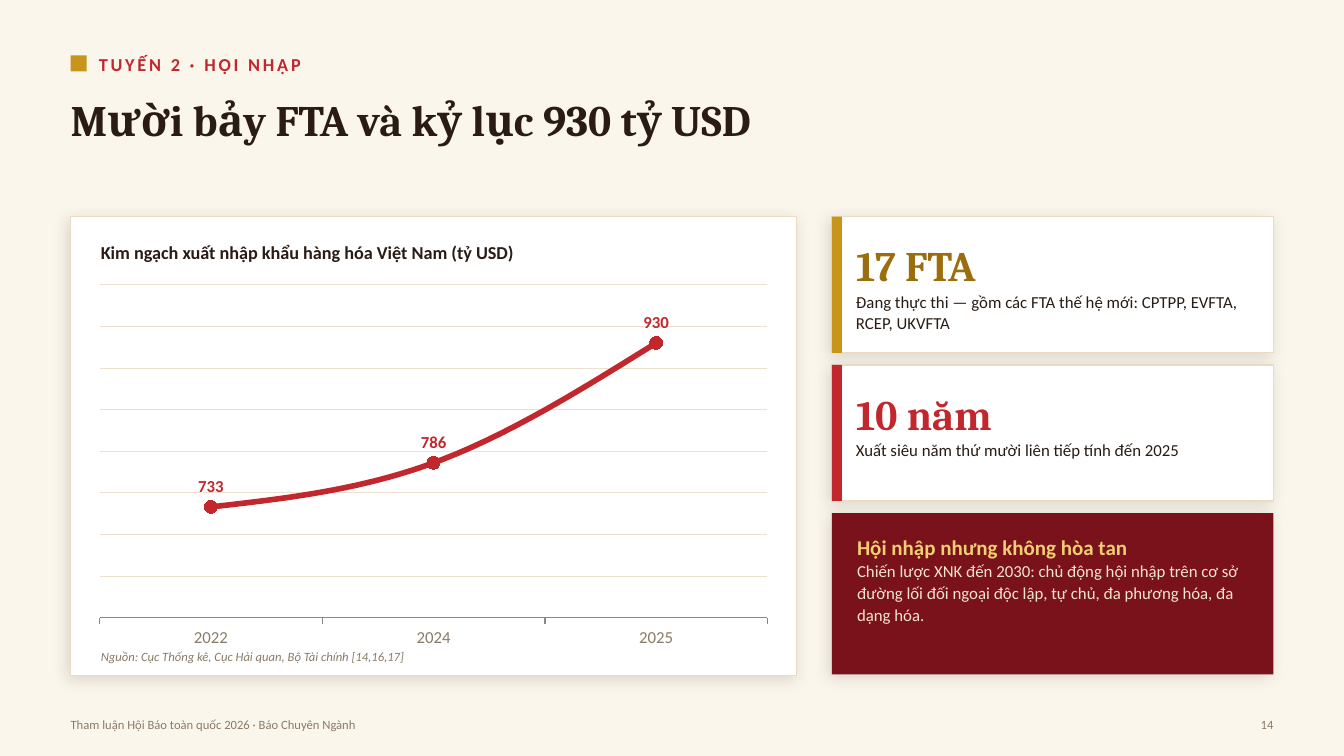
from dataclasses import dataclass
from typing import Optional

from lxml import etree
from pptx import Presentation
from pptx.chart.data import CategoryChartData
from pptx.dml.color import RGBColor
from pptx.enum.chart import XL_CHART_TYPE as ChartType
from pptx.enum.chart import XL_LABEL_POSITION as LabelPos
from pptx.enum.chart import XL_MARKER_STYLE as Marker
from pptx.enum.chart import XL_TICK_LABEL_POSITION as TickLabel
from pptx.enum.chart import XL_TICK_MARK as Tick
from pptx.enum.shapes import MSO_SHAPE as Shape
from pptx.enum.text import MSO_ANCHOR as Anchor
from pptx.enum.text import PP_ALIGN as Align
from pptx.oxml import parse_xml
from pptx.oxml.ns import nsdecls, qn
from pptx.slide import Slide
from pptx.util import Inches, Pt

CREAM = RGBColor(0xFB, 0xF6, 0xEC)
WHITE = RGBColor(0xFF, 0xFF, 0xFF)
INK = RGBColor(0x2A, 0x1C, 0x14)
RED = RGBColor(0xC1, 0x27, 0x2D)
GOLD = RGBColor(0xC8, 0x95, 0x1B)
DARK_GOLD = RGBColor(0x9A, 0x6E, 0x0F)
MAROON = RGBColor(0x7A, 0x12, 0x1B)
PALE_GOLD = RGBColor(0xF0, 0xCE, 0x73)
SAND = RGBColor(0xF3, 0xE6, 0xCC)
BORDER = RGBColor(0xEA, 0xDB, 0xC4)
GRID = RGBColor(0xED, 0xE1, 0xCE)
AXIS = RGBColor(0x88, 0x88, 0x88)
MUTED = RGBColor(0x8A, 0x7A, 0x68)
BLACK = RGBColor(0, 0, 0)

LEFT, TOP = 0.7, 2.15
SIDE_X, SIDE_W = 8.25, 4.38
STAT_H, STAT_PITCH = 1.35, 1.47


@dataclass
class Line:
    text: str
    size: float
    color: RGBColor
    bold: bool = False
    italic: bool = False
    font: str = "Calibri"
    tracking: float = 0


@dataclass
class Stat:
    figure: str
    note: str
    accent: RGBColor
    color: RGBColor


STATS = [
    Stat("17 FTA", "Đang thực thi — gồm các FTA thế hệ mới: CPTPP, EVFTA, RCEP, UKVFTA",
         GOLD, DARK_GOLD),
    Stat("10 năm", "Xuất siêu năm thứ mười liên tiếp tính đến 2025", RED, RED),
]


def add_text(s: Slide, x: float, y: float, w: float, h: float, *lines: Line,
             anchor: Anchor = Anchor.MIDDLE, align: Align = Align.LEFT,
             spacing: Optional[float] = None) -> None:
    tf = s.shapes.add_textbox(Inches(x), Inches(y), Inches(w), Inches(h)).text_frame
    tf.word_wrap = True
    tf.vertical_anchor = anchor
    tf.margin_left = tf.margin_right = tf.margin_top = tf.margin_bottom = 0
    tf.text = "\n".join(line.text for line in lines)
    for p, line in zip(tf.paragraphs, lines):
        p.alignment = align
        if spacing:
            p.line_spacing = spacing
        r = p.runs[0]
        r.font.name = line.font
        r.font.size = Pt(line.size)
        r.font.bold = line.bold
        r.font.italic = line.italic
        r.font.color.rgb = line.color
        if line.tracking:
            r.font._element.set("spc", str(int(line.tracking * 100)))


def add_block(s: Slide, x: float, y: float, w: float, h: float, fill: RGBColor,
              border: Optional[RGBColor] = None, shadow: bool = False) -> None:
    sp = s.shapes.add_shape(Shape.RECTANGLE, Inches(x), Inches(y), Inches(w), Inches(h))
    sp.shadow.inherit = False
    sp.fill.solid()
    sp.fill.fore_color.rgb = fill
    if border is None:
        sp.line.fill.background()
    else:
        sp.line.color.rgb = border
        sp.line.width = Pt(1)
    if shadow:
        effects = sp._element.spPr.find(qn("a:effectLst"))
        outer = etree.SubElement(effects, qn("a:outerShdw"), blurRad=str(Pt(11)),
                                 dist=str(Pt(3)), dir=str(135 * 60000),
                                 algn="bl", rotWithShape="0")
        color = etree.SubElement(outer, qn("a:srgbClr"), val=str(INK))
        etree.SubElement(color, qn("a:alpha"), val="14000")


def add_stat(s: Slide, y: float, stat: Stat) -> None:
    add_block(s, SIDE_X, y, SIDE_W, STAT_H, WHITE, BORDER, shadow=True)
    add_block(s, SIDE_X, y, 0.1, STAT_H, stat.accent)
    x = SIDE_X + 0.24
    add_text(s, x, y + 0.14, 3.98, 0.68,
             Line(stat.figure, 30, stat.color, bold=True, font="Cambria"))
    add_text(s, x, y + 0.73, 3.96, 0.57, Line(stat.note, 12, INK),
             anchor=Anchor.TOP, spacing=1.05)


def add_trade_chart(s: Slide) -> None:
    data = CategoryChartData(number_format="#,##0")
    data.categories = ["2022", "2024", "2025"]
    data.add_series("Series 1", [733, 786, 930])
    chart = s.shapes.add_chart(ChartType.LINE_MARKERS, Inches(0.85), Inches(2.75),
                               Inches(6.9), Inches(3.75), data).chart
    chart.has_title = False
    chart.has_legend = False
    chart.font.name = "Calibri"
    chart.font.size = Pt(10)
    chart.font.color.rgb = BLACK
    background = parse_xml(
        f'<c:spPr {nsdecls("c", "a")}><a:solidFill><a:srgbClr val="{WHITE}"/></a:solidFill>'
        '<a:ln><a:noFill/></a:ln></c:spPr>')
    chart._chartSpace.find(qn("c:txPr")).addprevious(background)

    years = chart.category_axis
    years.tick_label_position = TickLabel.LOW
    years.major_tick_mark = Tick.OUTSIDE
    years.has_major_gridlines = False
    years.format.line.color.rgb = AXIS
    years.format.line.width = Pt(1)
    years.tick_labels.font.name = "Calibri"
    years.tick_labels.font.size = Pt(12)
    years.tick_labels.font.color.rgb = MUTED

    value = chart.value_axis
    value.visible = False
    value.minimum_scale, value.maximum_scale, value.major_unit = 600, 1000, 50
    value.has_major_gridlines = True
    value.major_gridlines.format.line.color.rgb = GRID
    value.major_gridlines.format.line.width = Pt(0.5)

    plot = chart.plots[0]
    plot.vary_by_categories = False
    trade = plot.series[0]
    trade.smooth = True
    trade.format.line.color.rgb = RED
    trade.format.line.width = Pt(4)
    trade.marker.style = Marker.CIRCLE
    trade.marker.size = 9
    trade.marker.format.fill.solid()
    trade.marker.format.fill.fore_color.rgb = RED
    trade.marker.format.line.color.rgb = RED

    labels = trade.data_labels
    labels.show_value = True
    labels.position = LabelPos.ABOVE
    labels.number_format = "#,##0"
    labels.number_format_is_linked = False
    labels.font.name = "Calibri"
    labels.font.size = Pt(12)
    labels.font.bold = True
    labels.font.color.rgb = RED


def main() -> None:
    prs = Presentation()
    prs.slide_width, prs.slide_height = Inches(13.33), Inches(7.5)
    s = prs.slides.add_slide(prs.slide_layouts[6])
    s.background.fill.solid()
    s.background.fill.fore_color.rgb = CREAM

    add_block(s, LEFT, 0.55, 0.16, 0.16, GOLD)
    add_text(s, 0.98, 0.47, 11.63, 0.34,
             Line("TUYẾN 2 · HỘI NHẬP", 13, RED, bold=True, tracking=2))
    add_text(s, LEFT, 0.92, 11.93, 1,
             Line("Mười bảy FTA và kỷ lục 930 tỷ USD", 31, INK, bold=True, font="Cambria"),
             anchor=Anchor.TOP)

    add_block(s, LEFT, TOP, 7.2, 4.55, WHITE, BORDER, shadow=True)
    add_text(s, 1, 2.3, 6.6, 0.4,
             Line("Kim ngạch xuất nhập khẩu hàng hóa Việt Nam (tỷ USD)", 13, INK, bold=True))
    add_trade_chart(s)
    add_text(s, 1, 6.36, 6.6, 0.3,
             Line("Nguồn: Cục Thống kê, Cục Hải quan, Bộ Tài chính [14,16,17]", 9, MUTED,
                  italic=True))

    for i, stat in enumerate(STATS):
        add_stat(s, TOP + i * STAT_PITCH, stat)
    strategy_y = TOP + len(STATS) * STAT_PITCH
    add_block(s, SIDE_X, strategy_y, SIDE_W, 1.6, MAROON, shadow=True)
    add_text(s, SIDE_X + 0.25, strategy_y + 0.19, 3.88, 1.3,
             Line("Hội nhập nhưng không hòa tan", 15, PALE_GOLD, bold=True),
             Line("Chiến lược XNK đến 2030: chủ động hội nhập trên cơ sở đường lối đối ngoại "
                  "độc lập, tự chủ, đa phương hóa, đa dạng hóa.", 12, SAND),
             anchor=Anchor.TOP, spacing=1.08)

    add_text(s, LEFT, 7.04, 9, 0.3,
             Line("Tham luận Hội Báo toàn quốc 2026 · Báo Chuyên Ngành", 9, MUTED))
    add_text(s, 12.03, 7.04, 0.6, 0.3, Line("14", 9, MUTED), align=Align.RIGHT)
    prs.save("out.pptx")


if __name__ == "__main__":
    main()
